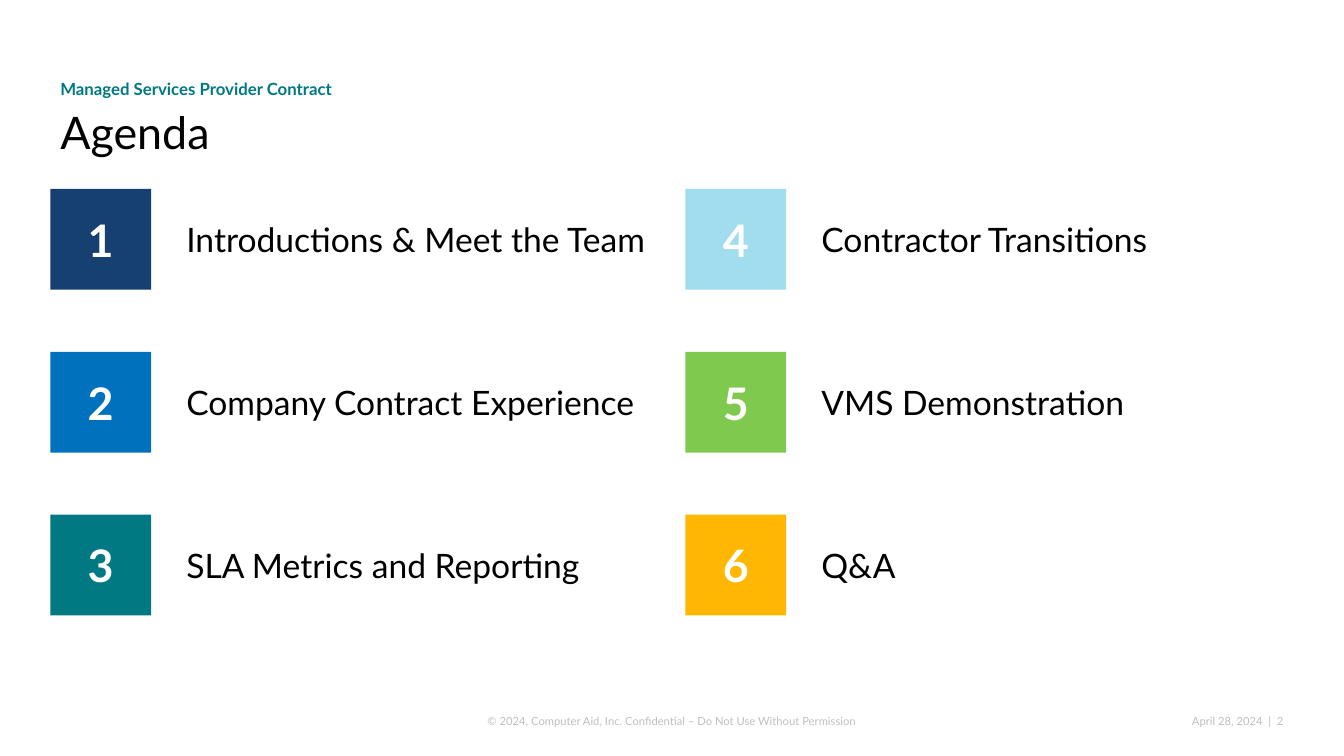
import pptx
import pptx.dml.color
import pptx.enum.shapes
import pptx.enum.text
import pptx.util

Pt = pptx.util.Pt
ALIGN = pptx.enum.text.PP_ALIGN
ANCHOR = pptx.enum.text.MSO_ANCHOR

TEAL = "007983"
BLACK = "000000"
WHITE = "FFFFFF"
GREY = "BFBFBF"

AGENDA = [
    ("Introductions & Meet the Team", "164070"),
    ("Company Contract Experience", "0071BC"),
    ("SLA Metrics and Reporting", TEAL),
    ("Contractor Transitions", "A1DDEF"),
    ("VMS Demonstration", "7FC94F"),
    ("Q&A", "FFB703"),
]

# Agenda grid, in points
ROWS = 3
LEFT, TOP = 36, 135
COLUMN_STEP, ROW_STEP = 453.6, 116.3
TILE = 72
LABEL_OFFSET, LABEL_WIDTH = 90, 345


def color(hex_value):
    return pptx.dml.color.RGBColor.from_string(hex_value)


def set_attributes(target, values):
    for name, value in values.items():
        setattr(target, name, value)


def write_text(shape, text, size, hex_value, bold=False, anchor=ANCHOR.MIDDLE, **paragraph_format):
    frame = shape.text_frame
    set_attributes(frame, {"word_wrap": True, "vertical_anchor": anchor})
    paragraph = frame.paragraphs[0]
    set_attributes(paragraph, {"alignment": ALIGN.LEFT, **paragraph_format})
    run = paragraph.add_run()
    run.text = text
    set_attributes(run.font, {"name": "Lato", "size": Pt(size), "bold": bold})
    run.font.color.rgb = color(hex_value)


def add_text(slide, box, text, size, hex_value, **text_format):
    shape = slide.shapes.add_textbox(*map(Pt, box))
    write_text(shape, text, size, hex_value, **text_format)


def add_number_tile(slide, left, top, number, fill):
    shape = slide.shapes.add_shape(
        pptx.enum.shapes.MSO_SHAPE.RECTANGLE, Pt(left), Pt(top), Pt(TILE), Pt(TILE))
    shape.shadow.inherit = False
    shape.fill.solid()
    shape.fill.fore_color.rgb = color(fill)
    shape.line.fill.background()
    write_text(shape, str(number), 32, WHITE, bold=True,
               alignment=ALIGN.CENTER, space_after=Pt(12))


def add_agenda_item(slide, index, label, fill):
    column, row = divmod(index, ROWS)
    left = LEFT + column * COLUMN_STEP
    top = TOP + row * ROW_STEP
    add_number_tile(slide, left, top, index + 1, fill)
    add_text(slide, (left + LABEL_OFFSET, top, LABEL_WIDTH, TILE), label, 24, BLACK,
             space_after=Pt(12))


def main():
    presentation = pptx.Presentation()
    presentation.slide_width = Pt(960)
    presentation.slide_height = Pt(540)
    slide = presentation.slides.add_slide(presentation.slide_layouts[6])

    # Heading
    add_text(slide, (LEFT, 36, 888, 38), "Managed Services Provider Contract", 12, TEAL,
             bold=True, anchor=ANCHOR.BOTTOM, space_after=Pt(12))
    add_text(slide, (LEFT, 74, 888, 43.2), "Agenda", 32, BLACK,
             anchor=ANCHOR.BOTTOM, line_spacing=0.9)

    # Numbered agenda, filled column by column
    for index, (label, fill) in enumerate(AGENDA):
        add_agenda_item(slide, index, label, fill)

    # Footer
    add_text(slide, (318, 500.4, 324, 28.8),
             "© 2024, Computer Aid, Inc. Confidential – Do Not Use Without Permission",
             8, GREY, alignment=ALIGN.CENTER)
    add_text(slide, (708, 500.4, 216, 28.8), "April 28, 2024  |  2", 8, GREY,
             alignment=ALIGN.RIGHT)

    presentation.save("out.pptx")


if __name__ == "__main__":
    main()
